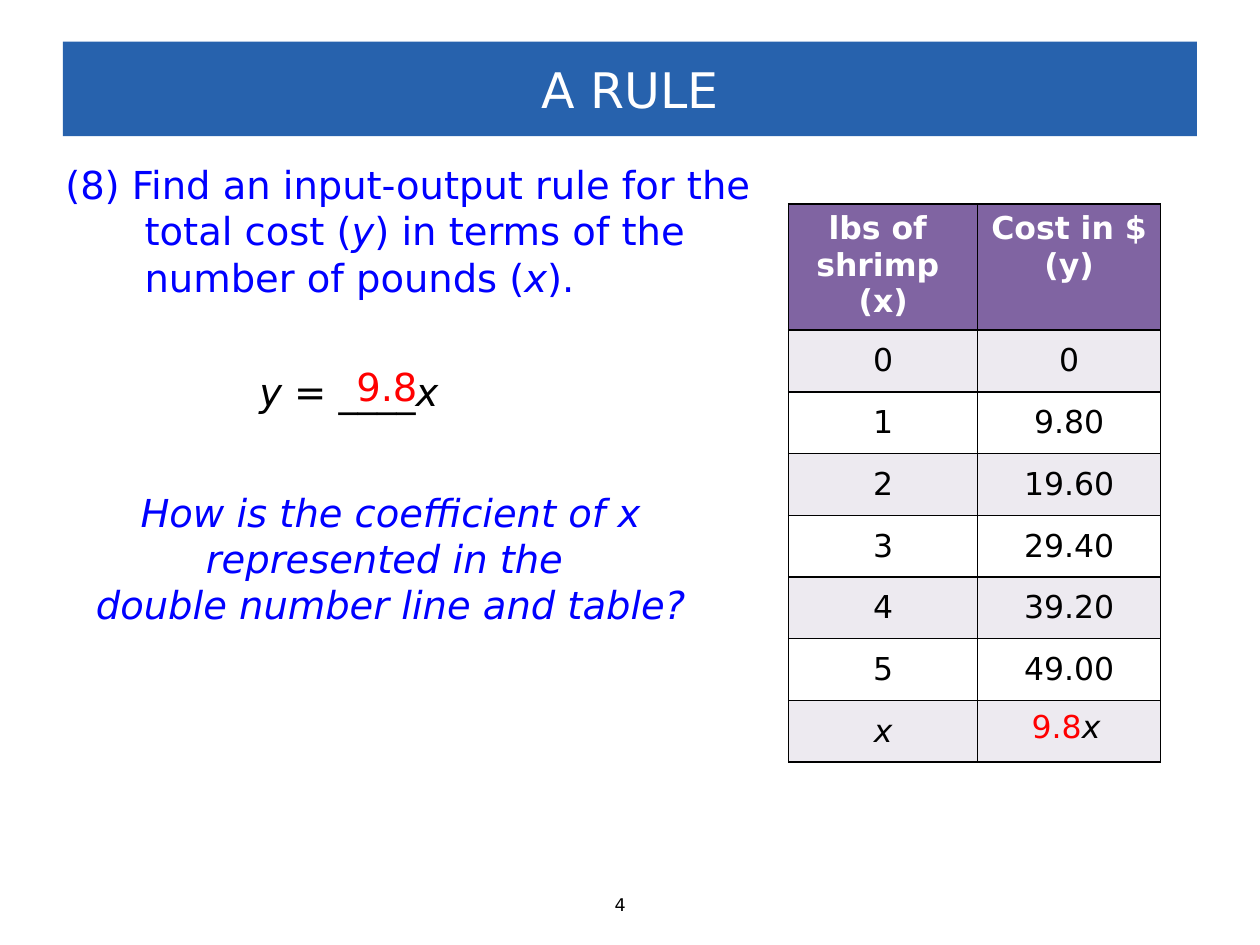
from lxml import etree
from pptx import Presentation
from pptx.dml.color import RGBColor
from pptx.enum.shapes import MSO_SHAPE
from pptx.enum.text import MSO_ANCHOR, PP_ALIGN
from pptx.oxml.ns import qn
from pptx.util import Inches, Pt

RECT = MSO_SHAPE.RECTANGLE
TOP, MIDDLE = MSO_ANCHOR.TOP, MSO_ANCHOR.MIDDLE
LEFT, CENTER = PP_ALIGN.LEFT, PP_ALIGN.CENTER
WHITE, BLACK, RED, BLUE = "FFFFFF", "000000", "FF0000", "0000FF"
NAVY, PURPLE, PALE = "2762AD", "8064A2", "EDEAF0"


def color(code):
    return RGBColor.from_string(code)


class Deck:
    """Holds the style and the current slide."""

    font = "DejaVu Sans"

    def __init__(self):
        self.show = Presentation()
        self.show.slide_width = Inches(10)
        self.show.slide_height = Inches(7.5)
        self.slide = self.show.slides.add_slide(self.show.slide_layouts[6])

    def style(self, run, size, tint, bold=False, italic=False):
        font = run.font
        font.name, font.size = self.font, Pt(size)
        font.bold, font.italic = bold, italic
        font.color.rgb = color(tint)

    def fill_text(self, frame, lines, size, tint, align=CENTER, bold=False):
        frame.text = "\n".join("" for _ in lines)
        for para, parts in zip(frame.paragraphs, lines):
            para.alignment = align
            for text, italic, *other in parts:
                run = para.add_run()
                run.text = text
                self.style(run, size, other[0] if other else tint, bold, italic)

    def banner(self, box, text):
        shape = self.slide.shapes.add_shape(RECT, *map(Inches, box))
        shape.shadow.inherit = False
        shape.fill.solid()
        shape.fill.fore_color.rgb = color(NAVY)
        shape.line.fill.background()
        shape.text_frame.vertical_anchor = MIDDLE
        self.fill_text(shape.text_frame, [[(text, False)]], 28, WHITE)

    def text(self, box, lines, size, tint, align=LEFT, hang=0):
        frame = self.slide.shapes.add_textbox(*map(Inches, box)).text_frame
        frame.word_wrap = True
        self.fill_text(frame, lines, size, tint, align)
        if hang:
            for para in frame.paragraphs:
                props = para._p.get_or_add_pPr()
                props.set("marL", str(Inches(hang)))
                props.set("indent", str(-Inches(hang)))

    def border(self, cell):
        props = cell._tc.get_or_add_tcPr()
        for side in ("lnL", "lnR", "lnT", "lnB"):
            line = etree.SubElement(props, qn(f"a:{side}"), w=str(Pt(1)))
            fill = etree.SubElement(line, qn("a:solidFill"))
            etree.SubElement(fill, qn("a:srgbClr"), val=BLACK)

    def table(self, box, rows, widths, heights):
        grid = self.slide.shapes.add_table(
            len(rows), len(widths), *map(Inches, box)).table
        for col, width in zip(grid.columns, widths):
            col.width = Inches(width)
        for i, (row, height) in enumerate(zip(rows, heights)):
            grid.rows[i].height = Inches(height)
            head = i == 0
            for j, text in enumerate(row):
                cell = grid.cell(i, j)
                self.border(cell)
                cell.fill.solid()
                cell.fill.fore_color.rgb = color(
                    PURPLE if head else PALE if i % 2 else WHITE)
                cell.vertical_anchor = TOP if head else MIDDLE
                lines = [[(line, line == "x")] for line in text.split("\n")]
                self.fill_text(cell.text_frame, lines, 18,
                               WHITE if head else BLACK, bold=head)


def main():
    deck = Deck()
    deck.text((4.78, 7.05, 0.44, 0.27), [[("4", False)]], 10, BLACK)
    deck.banner((0.5, 0.33, 9, 0.75), "A RULE")
    task = [("(8) Find an input-output rule for the total cost (", False),
            ("y", True), (") in terms of the number of pounds (", False),
            ("x", True), (").", False)]
    deck.text((0.42, 1.23, 5.66, 1.21), [task], 22, BLUE, hang=0.63)
    rule = [("y", True), (" = ____", False), ("x", True)]
    deck.text((1.96, 2.87, 1.93, 0.47), [rule], 22, BLACK)
    deck.text((2.73, 2.83, 1.01, 0.47), [[("9.8", False)]], 22, RED)

    costs = [(str(n), f"{9.8 * n:.2f}" if n else "0") for n in range(6)]
    rows = [("lbs of \nshrimp \n(x)", "Cost in $ \n(y)"), *costs, ("x", "")]
    deck.table((6.26, 1.62, 2.95, 4.43), rows, (1.5, 1.45), [1] + [0.49] * 7)
    deck.text((8.09, 5.56, 0.97, 0.77),
              [[("9.8", False), ("x", True, BLACK)]], 18, RED)

    ask = ("How is the coefficient of x represented in the ",
           "double number line and table?")
    deck.text((0.27, 3.83, 5.66, 1.21), [[(line, True)] for line in ask],
              22, BLUE, CENTER)
    deck.show.save("out.pptx")


if __name__ == "__main__":
    main()
